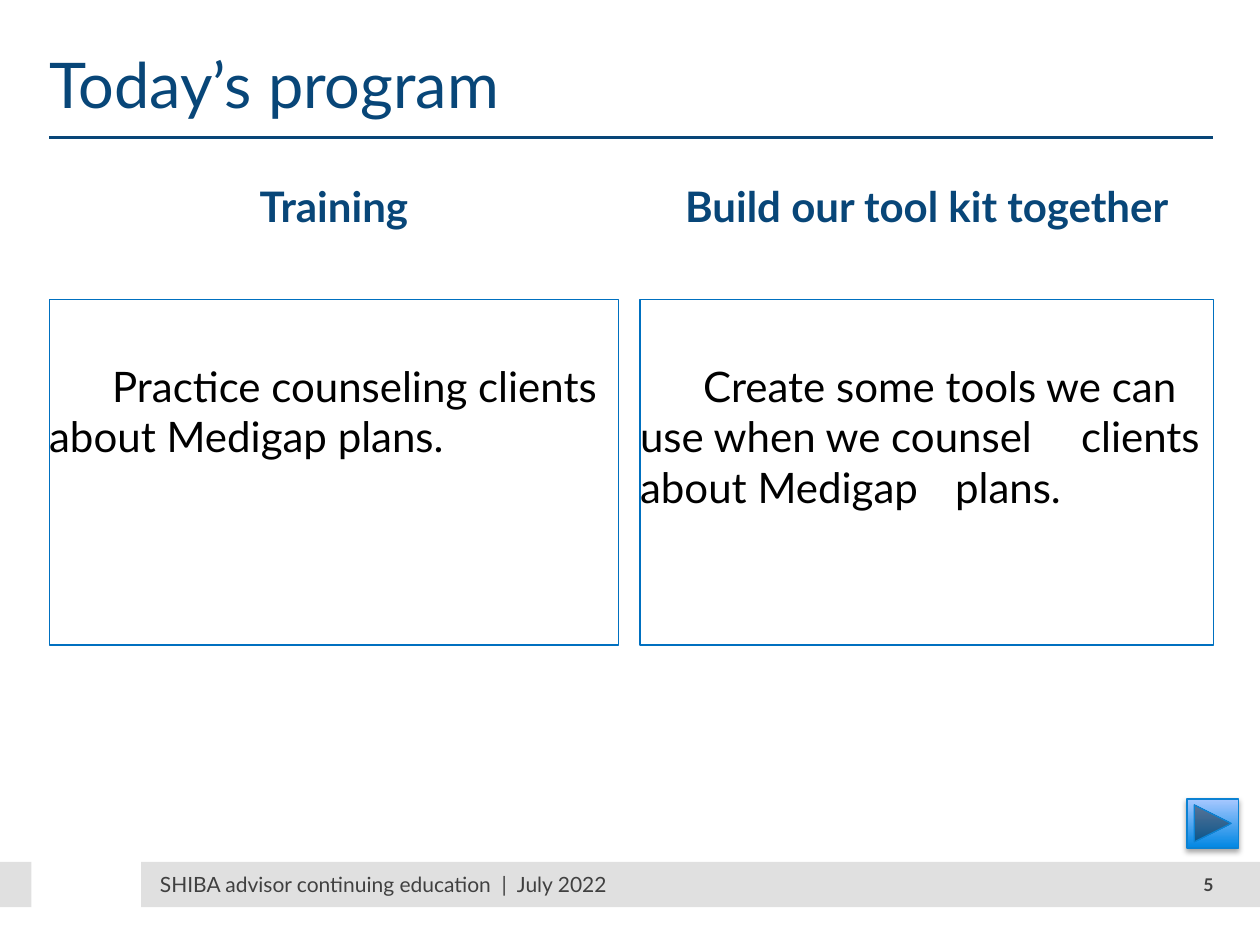
from lxml.etree import SubElement
from pptx import Presentation
from pptx.dml.color import RGBColor
from pptx.enum.shapes import MSO_CONNECTOR, MSO_SHAPE
from pptx.enum.text import MSO_ANCHOR, PP_ALIGN
from pptx.oxml import parse_xml
from pptx.oxml.ns import nsdecls, qn
from pptx.util import Inches, Pt

FONT = "Lato"
COLORS = {
    "navy": "084678",
    "black": "000000",
    "gray": "404040",
    "band": "E0E0E0",
    "border": "0070C0",
    "button_dark": "0087E3",
    "button_light": "A8C8FF",
    "button_line": "0B82D3",
}
LEFT, RIGHT = 0.39, 9.63


def rgb(name):
    return RGBColor.from_string(COLORS[name])


class SlideBuilder:
    """Holds the style and the slide being filled."""

    def __init__(self, prs):
        self.s = prs.slides.add_slide(prs.slide_layouts[5])

    def fill_text(self, tf, text, size, color, bold=False, align=PP_ALIGN.LEFT,
                  anchor=MSO_ANCHOR.TOP, inset_top=0):
        tf.word_wrap = True
        tf.vertical_anchor = anchor
        tf.margin_left = tf.margin_right = tf.margin_bottom = 0
        tf.margin_top = Inches(inset_top)
        p = tf.paragraphs[0]
        p.alignment = align
        r = p.add_run()
        r.text = text
        r.font.name = FONT
        r.font.size = Pt(size)
        r.font.bold = bold
        r.font.color.rgb = rgb(color)
        return p

    def title(self, text, x, y, w, h):
        sp = self.s.shapes.title
        sp.left, sp.top, sp.width, sp.height = map(Inches, (x, y, w, h))
        self.fill_text(sp.text_frame, text, 36, "navy")

    def text(self, text, x, y, w, h, size, color, **style):
        sp = self.s.shapes.add_textbox(*map(Inches, (x, y, w, h)))
        self.fill_text(sp.text_frame, text, size, color, **style)

    def rect(self, x, y, w, h, fill=None, line=None):
        sp = self.s.shapes.add_shape(MSO_SHAPE.RECTANGLE, *map(Inches, (x, y, w, h)))
        sp.shadow.inherit = False
        if fill:
            sp.fill.solid()
            sp.fill.fore_color.rgb = rgb(fill)
        else:
            sp.fill.background()
        if line:
            sp.line.color.rgb = rgb(line)
            sp.line.width = Pt(0.75)
        else:
            sp.line.fill.background()
        return sp

    def panel(self, text, x, y, w, h):
        """Outlined box with a first-line indent and tab stops for inner gaps."""
        sp = self.rect(x, y, w, h, line="border")
        p = self.fill_text(sp.text_frame, text, 24, "black", inset_top=0.48)
        pPr = p._p.get_or_add_pPr()
        pPr.set("marL", "0")
        pPr.set("indent", str(Inches(0.5)))
        tabs = SubElement(pPr, qn("a:tabLst"))
        for stop in (2.5, 3.5):
            SubElement(tabs, qn("a:tab"), pos=str(Inches(stop)), algn="l")

    def rule(self, x1, x2, y):
        line = self.s.shapes.add_connector(
            MSO_CONNECTOR.STRAIGHT, *map(Inches, (x1, y, x2, y)))
        line.line.color.rgb = rgb("navy")
        line.line.width = Pt(2)
        SubElement(line._element.spPr, qn("a:effectLst"))

    def next_button(self, x, y, w, h):
        sp = self.s.shapes.add_shape(
            MSO_SHAPE.ACTION_BUTTON_FORWARD_OR_NEXT, *map(Inches, (x, y, w, h)))
        sp.fill.gradient()
        sp.fill.gradient_angle = 90
        for stop, color in zip(sp.fill.gradient_stops, ("button_dark", "button_light")):
            stop.color.rgb = rgb(color)
        sp.line.color.rgb = rgb("button_line")
        sp.line.width = Pt(0.75)
        sp._element.spPr.append(parse_xml(
            f'<a:effectLst {nsdecls("a")}>'
            f'<a:outerShdw blurRad="{Pt(3.1)}" dist="{Pt(1.8)}" dir="5400000" rotWithShape="0">'
            f'<a:srgbClr val="{COLORS["black"]}"><a:alpha val="35000"/></a:srgbClr>'
            '</a:outerShdw></a:effectLst>'))


def main():
    prs = Presentation()
    prs.slide_width, prs.slide_height = Inches(10), Inches(7.5)
    b = SlideBuilder(prs)

    for x, w in ((1.12, 8.88), (0, 0.25)):
        b.rect(x, 6.84, w, 0.36, fill="band")
    b.rule(LEFT, RIGHT, 1.09)
    b.title("Today’s program", LEFT, 0.36, RIGHT - LEFT, 0.73)

    columns = (
        (LEFT, 4.52, "Training",
         "Practice counseling clients about Medigap plans."),
        (5.08, 4.55, "Build our tool kit together",
         "Create some tools we can use when we counsel \tclients about Medigap \tplans."),
    )
    for x, w, heading, body in columns:
        b.text(heading, x, 1.43, w, 0.94, 24, "navy", bold=True, align=PP_ALIGN.CENTER)
        b.panel(body, x, 2.38, w, 2.74)

    b.text("SHIBA advisor continuing education  |  July 2022", 1.27, 6.91, 5, 0.22,
           12, "gray", anchor=MSO_ANCHOR.MIDDLE)
    b.text("5", 8.93, 6.91, 0.7, 0.22, 10, "gray", bold=True,
           align=PP_ALIGN.RIGHT, anchor=MSO_ANCHOR.MIDDLE)
    b.next_button(9.42, 6.34, 0.41, 0.39)

    prs.save("out.pptx")


if __name__ == "__main__":
    main()
